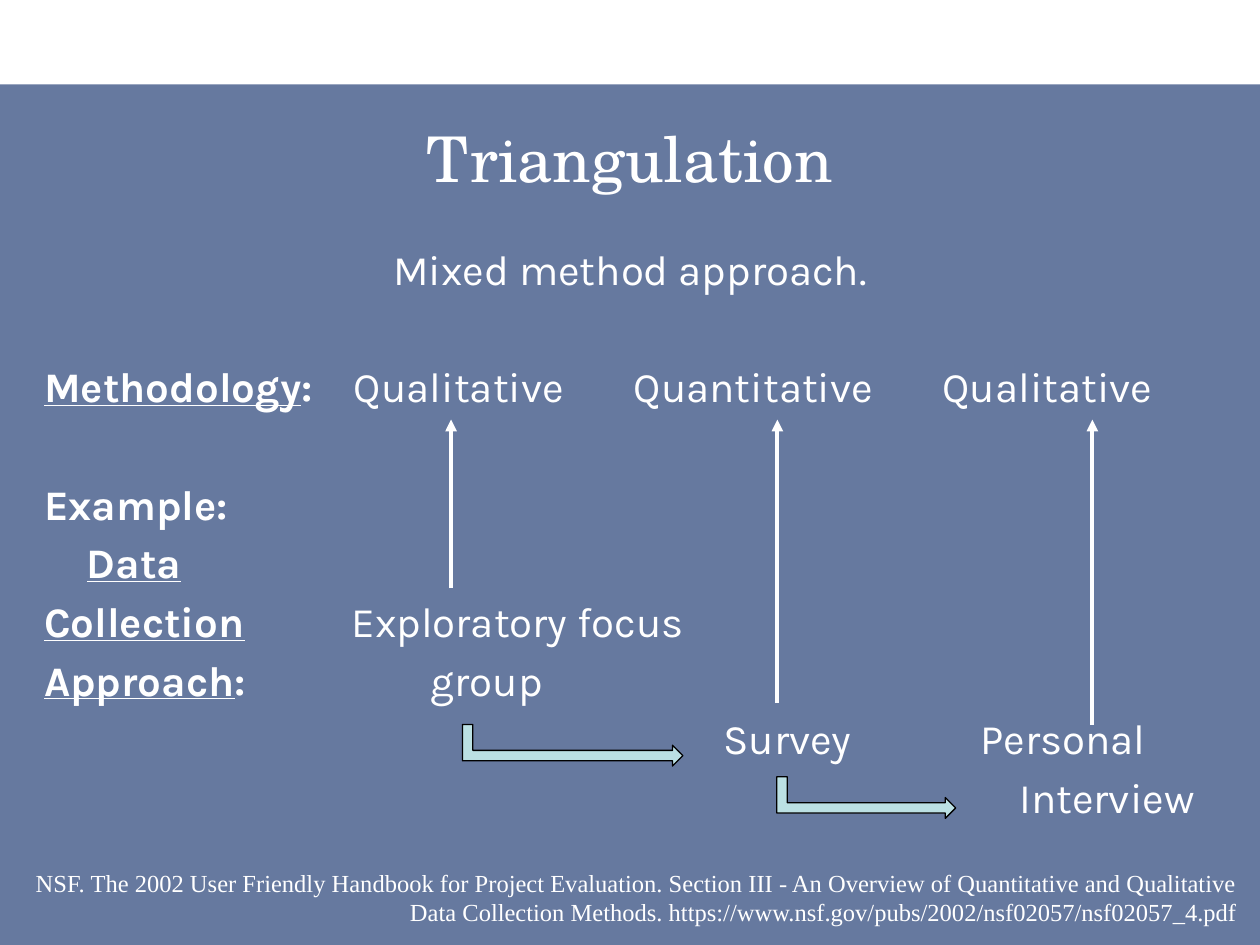
from lxml.etree import SubElement
from pptx import Presentation
from pptx.dml.color import RGBColor
from pptx.enum.shapes import MSO_CONNECTOR, MSO_SHAPE
from pptx.enum.text import MSO_ANCHOR as ANCHOR, PP_ALIGN as ALIGN
from pptx.oxml.ns import qn
from pptx.util import Inches, Pt

WHITE, NAVY, AQUA, BLACK = "FFFFFF", "002060", "BBE0E3", "000000"
TITLE = "Triangulation"
SUBTITLE = "Mixed method approach."
CITATION = (
    "NSF. The 2002 User Friendly Handbook for Project Evaluation. "
    "Section III - An Overview of Quantitative and Qualitative Data Collection "
    "Methods. https://www.nsf.gov/pubs/2002/nsf02057/nsf02057_4.pdf"
)
# row, left, underlined part, plain part
LABELS = [
    (2, 0.35, "Methodology", ":"),
    (4, 0.35, "", "Example:"),
    (5, 0.69, "Data", ""),
    (6, 0.35, "Collection", ""),
    (7, 0.35, "Approach", ":"),
]
# row, left, text
ENTRIES = [
    (2, 2.81, "Qualitative"),
    (2, 5.03, "Quantitative"),
    (2, 7.48, "Qualitative"),
    (6, 2.79, "Exploratory focus"),
    (7, 3.42, "group"),
    (8, 5.74, "Survey"),
    (8, 7.78, "Personal"),
    (9, 8.09, "Interview"),
]
# x, bottom
METHOD_ARROWS = [(3.58, 4.67), (6.17, 5.58), (8.67, 5.75)]
ARROW_TOP = 3.33
# left, top, length
STEP_ARROWS = [(4.38, 5.04, 1.75), (6.71, 5.62, 1.42)]
STEP_THICKNESS = 0.33
FIRST_ROW, ROW_PITCH, ROW_HEIGHT = 1.93, 0.466, 0.4


def rgb(value):
    return RGBColor.from_string(value)


def add_text(slide, box, text, underlined="", font="Karla", size=24, bold=False,
             align=ALIGN.LEFT, anchor=ANCHOR.MIDDLE, inset=0):
    frame = slide.shapes.add_textbox(*map(Inches, box)).text_frame
    frame.word_wrap = True
    frame.vertical_anchor = anchor
    frame.margin_left = frame.margin_right = Inches(inset)
    frame.margin_top = frame.margin_bottom = Inches(inset / 2)
    paragraph = frame.paragraphs[0]
    paragraph.alignment = align
    for part, underline in ((underlined, True), (text, False)):
        if part:
            run = paragraph.add_run()
            run.text = part
            run.font.name = font
            run.font.size = Pt(size)
            run.font.bold = bold
            run.font.underline = underline
            run.font.color.rgb = rgb(WHITE)


def row_box(row, left, width):
    return left, FIRST_ROW + row * ROW_PITCH, width, ROW_HEIGHT


def add_backdrop(slide):
    backdrop = slide.shapes.add_shape(
        MSO_SHAPE.RECTANGLE, Inches(0), Inches(0.67), Inches(10), Inches(6.83))
    backdrop.shadow.inherit = False
    backdrop.fill.solid()
    backdrop.fill.fore_color.rgb = rgb(NAVY)
    backdrop.line.fill.background()
    color = backdrop.fill._xPr.find(qn("a:solidFill"))[0]
    SubElement(color, qn("a:alpha"), val="60000")


def add_method_arrow(slide, x, bottom):
    arrow = slide.shapes.add_connector(
        MSO_CONNECTOR.STRAIGHT, Inches(x), Inches(bottom), Inches(x), Inches(ARROW_TOP))
    arrow.line.color.rgb = rgb(WHITE)
    arrow.line.width = Pt(2.25)
    SubElement(arrow.line._get_or_add_ln(), qn("a:tailEnd"), type="triangle")
    SubElement(arrow._element.spPr, qn("a:effectLst"))


def add_step_arrow(slide, left, top, length):
    arrow = slide.shapes.add_shape(
        MSO_SHAPE.BENT_UP_ARROW, Inches(left), Inches(top),
        Inches(STEP_THICKNESS), Inches(length))
    arrow.rotation = 90
    arrow.shadow.inherit = False
    arrow.fill.solid()
    arrow.fill.fore_color.rgb = rgb(AQUA)
    arrow.line.color.rgb = rgb(BLACK)
    arrow.line.width = Pt(0.75)


def main():
    deck = Presentation()
    deck.slide_width, deck.slide_height = Inches(10), Inches(7.5)
    slide = deck.slides.add_slide(deck.slide_layouts[6])

    add_backdrop(slide)
    add_text(slide, (0.25, 0.83, 9.5, 0.83), TITLE,
             font="TeX Gyre Schola", size=36, align=ALIGN.CENTER)
    add_text(slide, row_box(0, 0.25, 9.5), SUBTITLE, align=ALIGN.CENTER)
    for row, left, underlined, plain in LABELS:
        add_text(slide, row_box(row, left, 2.4), plain, underlined=underlined, bold=True)
    for row, left, entry in ENTRIES:
        add_text(slide, row_box(row, left, 2.8 if row == 6 else 2.1), entry)
    for x, bottom in METHOD_ARROWS:
        add_method_arrow(slide, x, bottom)
    for left, top, length in STEP_ARROWS:
        add_step_arrow(slide, left, top, length)
    add_text(slide, (0, 6.84, 9.92, 0.57), CITATION, font="Times New Roman", size=14,
             align=ALIGN.RIGHT, anchor=ANCHOR.TOP, inset=0.1)

    deck.save("out.pptx")


if __name__ == "__main__":
    main()
